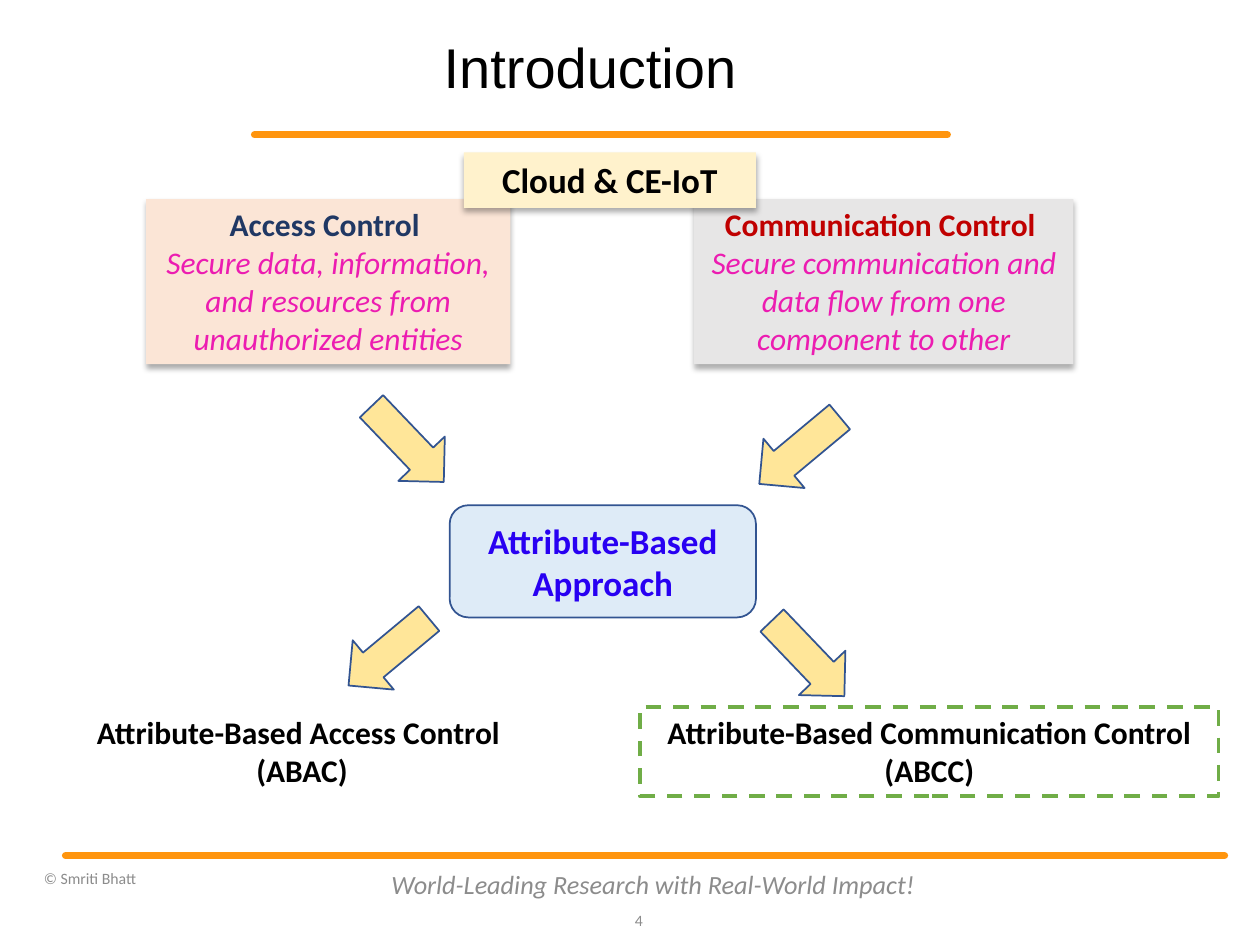
from dataclasses import dataclass
from typing import Optional

from lxml import etree
from pptx import Presentation
from pptx.dml.color import RGBColor
from pptx.enum.dml import MSO_LINE
from pptx.enum.shapes import MSO_CONNECTOR, MSO_SHAPE
from pptx.enum.text import MSO_ANCHOR, MSO_AUTO_SIZE, PP_ALIGN
from pptx.oxml import parse_xml
from pptx.oxml.ns import qn
from pptx.util import Pt

RECT, ROUNDED, DOWN_ARROW = MSO_SHAPE.RECTANGLE, MSO_SHAPE.ROUNDED_RECTANGLE, MSO_SHAPE.DOWN_ARROW
LEFT, CENTER, RIGHT = PP_ALIGN.LEFT, PP_ALIGN.CENTER, PP_ALIGN.RIGHT
TOP, MIDDLE, BOTTOM = MSO_ANCHOR.TOP, MSO_ANCHOR.MIDDLE, MSO_ANCHOR.BOTTOM
GROW = MSO_AUTO_SIZE.SHAPE_TO_FIT_TEXT
DASH = MSO_LINE.DASH
STRAIGHT = MSO_CONNECTOR.STRAIGHT

ORANGE, OUTLINE, GREEN = "FF950E", "325491", "70AD47"
BLACK, GRAY, PINK = "000000", "8C8C8C", "EC1CB1"
TOWARD_RIGHT, TOWARD_LEFT = 316.3, 50.2

SHADOW = (
    '<a:effectLst xmlns:a="http://schemas.openxmlformats.org/drawingml/2006/main">'
    '<a:outerShdw blurRad="44450" dist="27940" dir="5400000" algn="ctr" rotWithShape="0">'
    '<a:srgbClr val="000000"><a:alpha val="32000"/></a:srgbClr></a:outerShdw></a:effectLst>'
)


@dataclass
class Box:
    left: float
    top: float
    width: float
    height: float


@dataclass
class Line:
    text: str
    size: float
    color: str
    bold: bool = False
    italic: bool = False
    font: str = "Calibri"


@dataclass
class Label:
    box: Box
    lines: list[Line]
    align: PP_ALIGN = CENTER
    anchor: MSO_ANCHOR = MIDDLE
    grow: bool = False
    spacing: Optional[float] = None


@dataclass
class Card:
    box: Box
    fill: str
    lines: list[Line]


@dataclass
class Arrow:
    left: float
    top: float
    rotation: float


def rgb(value: str) -> RGBColor:
    return RGBColor.from_string(value)


def place(box: Box) -> tuple:
    return Pt(box.left), Pt(box.top), Pt(box.width), Pt(box.height)


def write(shape, lines: list[Line], align=CENTER, anchor=TOP, grow=False, spacing=None) -> None:
    frame = shape.text_frame
    frame.word_wrap = True
    frame.vertical_anchor = anchor
    if grow:
        frame.auto_size = GROW
    frame.text = "\n".join(line.text for line in lines)
    for paragraph, line in zip(frame.paragraphs, lines):
        paragraph.alignment = align
        if spacing:
            paragraph.line_spacing = spacing
        font = paragraph.runs[0].font
        font.name, font.size = line.font, Pt(line.size)
        font.bold, font.italic = line.bold, line.italic
        font.color.rgb = rgb(line.color)


def add_label(slide, label: Label) -> None:
    text_box = slide.shapes.add_textbox(*place(label.box))
    write(text_box, label.lines, label.align, label.anchor, label.grow, label.spacing)


def add_block(slide, kind, box: Box, fill: Optional[str] = None,
              outline: Optional[str] = None, weight: float = 1):
    block = slide.shapes.add_shape(kind, *place(box))
    block.shadow.inherit = False
    if fill:
        block.fill.solid()
        block.fill.fore_color.rgb = rgb(fill)
    else:
        block.fill.background()
    if outline:
        block.line.color.rgb = rgb(outline)
        block.line.width = Pt(weight)
    else:
        block.line.fill.background()
    return block


def add_card(slide, card: Card) -> None:
    block = add_block(slide, RECT, card.box, card.fill)
    properties = block._element.spPr
    properties.replace(properties.find(qn("a:effectLst")), parse_xml(SHADOW))
    write(block, card.lines, grow=True)


def add_arrow(slide, arrow: Arrow) -> None:
    block = add_block(slide, DOWN_ARROW, Box(arrow.left, arrow.top, 36.7, 59.8), "FFE699", OUTLINE)
    block.rotation = arrow.rotation


def add_rule(slide, start: float, end: float, y: float) -> None:
    rule = slide.shapes.add_connector(STRAIGHT, Pt(start), Pt(y), Pt(end), Pt(y))
    rule.line.color.rgb = rgb(ORANGE)
    rule.line.width = Pt(4)
    rule.line._get_or_add_ln().set("cap", "rnd")
    etree.SubElement(rule._element.spPr, qn("a:effectLst"))


def topic(heading: str, color: str, goal: str) -> list[Line]:
    return [Line(heading, 18, color, bold=True), Line(goal, 18, PINK, italic=True)]


def outcome(name: str, acronym: str) -> list[Line]:
    return [Line(text, 18, BLACK, bold=True) for text in (name, acronym)]


ABCC_BOX = Box(365.8, 403.9, 330.5, 51.1)

LABELS = [
    Label(Box(143.3, 24.5, 388, 36.7), [Line("Introduction", 32, BLACK, font="Arial")],
          anchor=BOTTOM, spacing=0.9),
    Label(Box(345.6, 511.2, 28.8, 28.8), [Line("4", 9, GRAY)], RIGHT),
    Label(Box(216, 491, 314.6, 28.8),
          [Line("World-Leading Research with Real-World Impact!", 15, GRAY, italic=True)]),
    Label(Box(18, 488.9, 198, 25.9), [Line("© Smriti Bhatt", 9, GRAY)], LEFT),
    Label(Box(37.4, 403.9, 266.4, 52.6),
          outcome("Attribute-Based Access Control", " (ABAC)"), anchor=TOP, grow=True),
    Label(ABCC_BOX, outcome("Attribute-Based Communication Control", " (ABCC) "),
          anchor=TOP, grow=True),
]

CARDS = [
    Card(Box(83.5, 113.8, 208.1, 94.3), "FBE5D6",
         topic("Access Control ", "203864",
               "Secure data, information, and resources from unauthorized entities")),
    Card(Box(396.7, 113.8, 216.7, 94.3), "E7E6E6",
         topic("Communication Control ", "C00000",
               "Secure communication and data flow from one component to other")),
    Card(Box(265, 87.1, 167, 31.7), "FFF2CC", [Line("Cloud & CE-IoT", 20, BLACK, bold=True)]),
]

ARROWS = [
    Arrow(214.6, 223.9, TOWARD_RIGHT),
    Arrow(438.5, 227.5, TOWARD_LEFT),
    Arrow(203.8, 342.7, TOWARD_LEFT),
    Arrow(443.5, 346.3, TOWARD_RIGHT),
]


def main() -> None:
    deck = Presentation()
    deck.slide_width, deck.slide_height = Pt(720), Pt(540)
    slide = deck.slides.add_slide(deck.slide_layouts[6])

    add_rule(slide, 145.4, 541.4, 77)
    add_rule(slide, 37.4, 699.8, 488.9)
    for label in LABELS:
        add_label(slide, label)
    for card in CARDS:
        add_card(slide, card)

    approach = add_block(slide, ROUNDED, Box(257, 288.7, 175, 64.1), "DEEBF7", OUTLINE)
    write(approach, [Line("Attribute-Based Approach", 20, "2800F2", bold=True)], anchor=MIDDLE)
    for arrow in ARROWS:
        add_arrow(slide, arrow)

    highlight = add_block(slide, RECT, ABCC_BOX, outline=GREEN, weight=2.25)
    highlight.line.dash_style = DASH
    deck.save("out.pptx")


if __name__ == "__main__":
    main()
